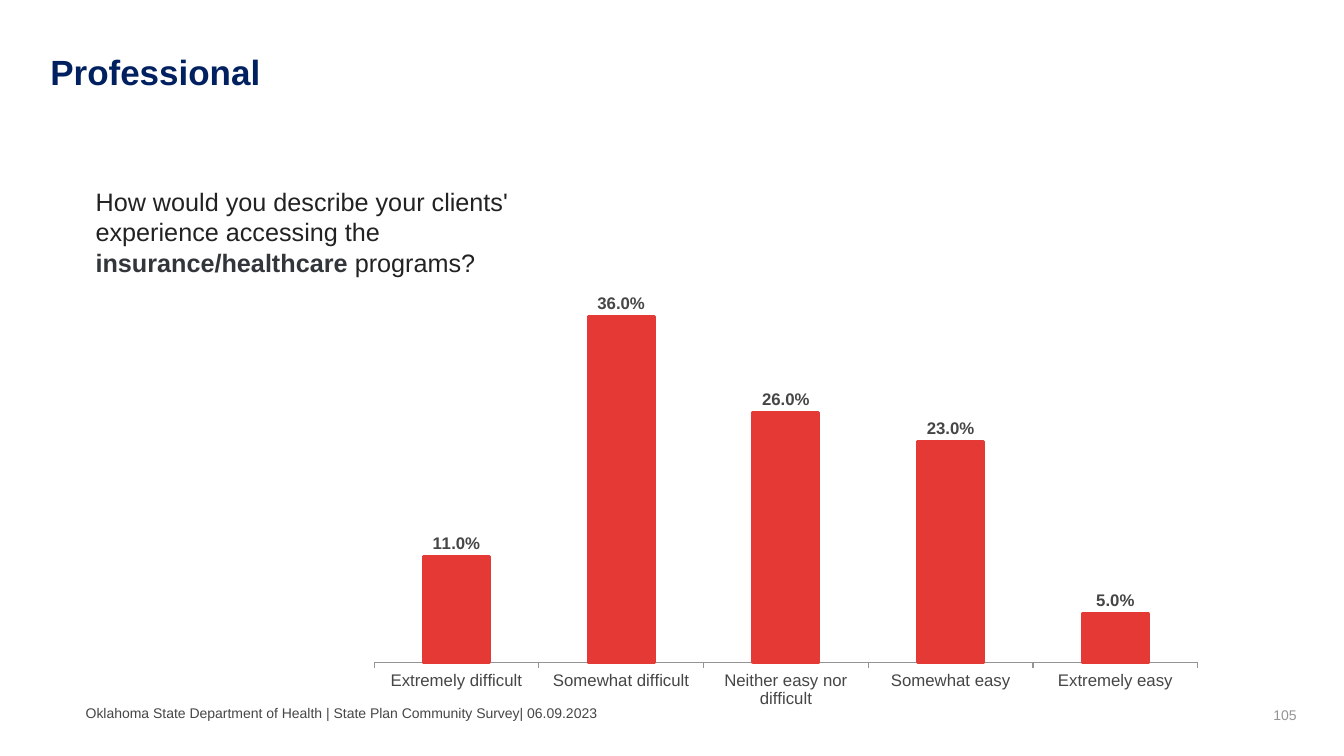
from dataclasses import dataclass

from pptx import Presentation
from pptx.chart.data import CategoryChartData
from pptx.dml.color import RGBColor
from pptx.enum.chart import XL_CHART_TYPE, XL_LABEL_POSITION, XL_TICK_LABEL_POSITION, XL_TICK_MARK
from pptx.enum.text import MSO_ANCHOR, MSO_AUTO_SIZE, PP_ALIGN
from pptx.util import Pt

COLUMN = XL_CHART_TYPE.COLUMN_CLUSTERED
OUTSIDE = XL_LABEL_POSITION.OUTSIDE_END
LOW = XL_TICK_LABEL_POSITION.LOW
TICK_OUT = XL_TICK_MARK.OUTSIDE
TOP, MIDDLE = MSO_ANCHOR.TOP, MSO_ANCHOR.MIDDLE
LEFT, RIGHT = PP_ALIGN.LEFT, PP_ALIGN.RIGHT
NO_FIT = MSO_AUTO_SIZE.NONE
PX = 9144


@dataclass(frozen=True)
class Theme:
    """Colours, type sizes and font of the slide."""
    font: str = "Arial"
    navy: str = "002060"
    ink: str = "222222"
    strong: str = "32363A"
    gray: str = "464646"
    pale: str = "949494"
    red: str = "E53935"
    title: int = 25
    body: int = 18
    label: int = 12
    small: int = 10


THEME = Theme()
SURVEY = {
    "Extremely difficult": 0.11,
    "Somewhat difficult": 0.36,
    "Neither easy nor difficult": 0.26,
    "Somewhat easy": 0.23,
    "Extremely easy": 0.05,
}


def style(font, size, color, bold=False):
    """Set the face, size, colour and weight of a font."""
    font.name = THEME.font
    font.size = Pt(size)
    font.bold = bold
    font.color.rgb = RGBColor.from_string(color)


def place(shape, box):
    """Move a shape to a box given in px."""
    shape.left, shape.top, shape.width, shape.height = (n * PX for n in box)


def write(shape, runs, size, align=LEFT, anchor=TOP, inset=10):
    """Fill a shape with one paragraph of (text, colour, bold) runs."""
    frame = shape.text_frame
    frame.word_wrap = True
    frame.auto_size = NO_FIT
    frame.vertical_anchor = anchor
    frame.margin_left, frame.margin_right = inset * PX, 10 * PX
    frame.margin_top = frame.margin_bottom = 5 * PX
    para = frame.paragraphs[0]
    para.alignment = align
    for text, color, bold in runs:
        run = para.add_run()
        run.text = text
        style(run.font, size, color, bold)


def add_text(slide, box, runs, size, **form):
    """Add a text box and fill it."""
    write(slide.shapes.add_textbox(*(n * PX for n in box)), runs, size, **form)


def add_title(slide, box):
    """Place and fill the title."""
    place(slide.shapes.title, box)
    write(slide.shapes.title, [("Professional", THEME.navy, True)], THEME.title, inset=0)


def add_prompt(slide, box):
    """Add the survey question."""
    add_text(slide, box, [
        ("How would you describe your clients' experience accessing the ", THEME.ink, False),
        ("insurance/healthcare ", THEME.strong, True),
        ("programs?", THEME.ink, False),
    ], THEME.body)


def add_foot(slide, box):
    """Add the source line at left and the page number at right."""
    left, top, width, height = box
    line = "Oklahoma State Department of Health | State Plan Community Survey| 06.09.2023"
    add_text(slide, (left, top, 890, height), [(line, THEME.gray, False)],
             THEME.small, anchor=MIDDLE, inset=0)
    add_text(slide, (left + width - 300, top + 2, 300, height),
             [("105", THEME.pale, False)], THEME.small, align=RIGHT, anchor=MIDDLE)


def add_bars(slide, box):
    """Add the column chart of answers."""
    data = CategoryChartData(number_format="0.0%")
    data.categories = list(SURVEY)
    data.add_series("Series 1", list(SURVEY.values()))
    chart = slide.shapes.add_chart(COLUMN, *(n * PX for n in box), data).chart
    chart.has_legend = chart.has_title = False
    style(chart.font, THEME.body, THEME.gray)

    value = chart.value_axis
    value.has_major_gridlines = False
    value.minimum_scale, value.maximum_scale = 0, 0.4
    value.visible = False

    axis = chart.category_axis
    axis.major_tick_mark = TICK_OUT
    axis.tick_label_position = LOW
    axis.format.line.color.rgb = RGBColor.from_string(THEME.pale)
    style(axis.tick_labels.font, THEME.label, THEME.gray)

    plot = chart.plots[0]
    plot.gap_width = 150
    plot.vary_by_categories = False
    bars = plot.series[0]
    red = RGBColor.from_string(THEME.red)
    bars.format.fill.solid()
    bars.format.fill.fore_color.rgb = red
    bars.format.line.color.rgb = red
    bars.format.line.width = Pt(2.25)
    labels = bars.data_labels
    labels.show_value = True
    labels.position = OUTSIDE
    labels.number_format = "0.0%"
    labels.number_format_is_linked = False
    style(labels.font, THEME.label, THEME.gray, True)


def main():
    """Build the survey slide and save it."""
    deck = Presentation()
    deck.slide_width, deck.slide_height = 1333 * PX, 750 * PX
    slide = deck.slides.add_slide(deck.slide_layouts.get_by_name("Title Only"))
    add_title(slide, (50, 45, 1214, 92))
    add_foot(slide, (85, 696, 1211, 22))
    add_prompt(slide, (85, 180, 538, 131))
    add_bars(slide, (354, 267, 851, 444))
    deck.save("out.pptx")


if __name__ == "__main__":
    main()
